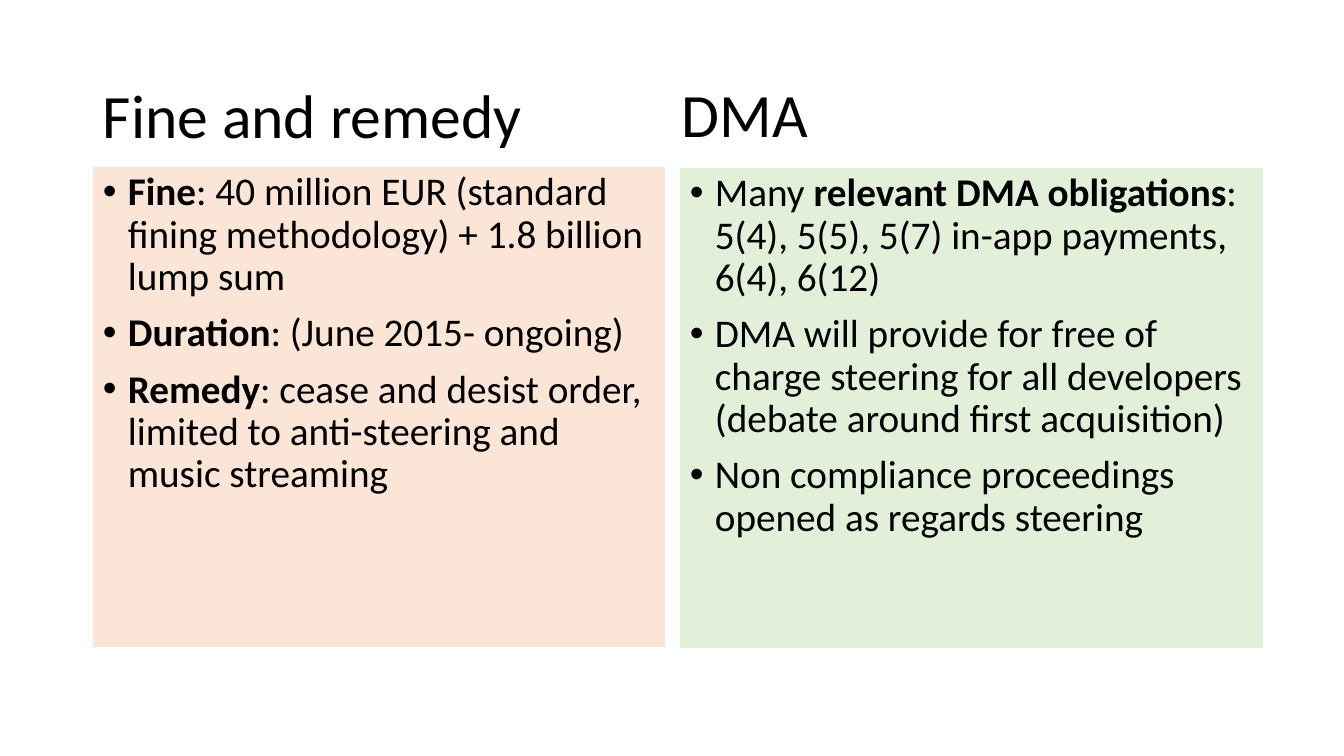
from lxml import etree
from pptx import Presentation
from pptx.dml.color import RGBColor
from pptx.enum.text import MSO_ANCHOR
from pptx.oxml.ns import qn
from pptx.util import Pt

MIDDLE = MSO_ANCHOR.MIDDLE
TOP = MSO_ANCHOR.TOP
PX = 914400 / 100.8
THEME = {
    "font": "Calibri",
    "text": RGBColor.from_string("000000"),
    "remedy_fill": RGBColor.from_string("FBE5D6"),
    "dma_fill": RGBColor.from_string("E2F0D9"),
    "heading": Pt(44),
    "body": Pt(28),
    "line_spacing": 0.9,
    "paragraph_gap": Pt(10),
}
BULLET_INDENT = 25


def px(length):
    return round(length * PX)


def add_text(slide, bounds, paragraphs, size, anchor):
    box = slide.shapes.add_textbox(*map(px, bounds))
    frame = box.text_frame
    frame.word_wrap = True
    frame.vertical_anchor = anchor
    for index, parts in enumerate(paragraphs):
        paragraph = frame.paragraphs[0] if index == 0 else frame.add_paragraph()
        paragraph.line_spacing = THEME["line_spacing"]
        if index:
            paragraph.space_before = THEME["paragraph_gap"]
        for words, bold in parts:
            run = paragraph.add_run()
            run.text = words
            run.font.name = THEME["font"]
            run.font.size = size
            run.font.bold = bold
            run.font.color.rgb = THEME["text"]
    return box


columns = [
    {
        "heading": "Fine and remedy",
        "heading_bounds": (93, 69, 444, 100),
        "panel_bounds": (93, 167, 572, 480),
        "fill": THEME["remedy_fill"],
        "points": [
            [("Fine", True),
             (": 40 million EUR (standard fining methodology) + 1.8 billion lump sum", False)],
            [("Duration", True), (": (June 2015- ongoing)", False)],
            [("Remedy", True),
             (": cease and desist order, limited to anti-steering and music streaming", False)],
        ],
    },
    {
        "heading": "DMA",
        "heading_bounds": (672, 59, 464, 117),
        "panel_bounds": (680, 168, 583, 480),
        "fill": THEME["dma_fill"],
        "points": [
            [("Many ", False), ("relevant DMA obligations", True),
             (": 5(4), 5(5), 5(7) in-app payments, 6(4), 6(12)", False)],
            [("DMA will provide for free of charge steering for all developers "
              "(debate around first acquisition)", False)],
            [("Non compliance proceedings opened as regards steering", False)],
        ],
    },
]

presentation = Presentation()
presentation.slide_width = px(1344)
presentation.slide_height = px(756)
slide = presentation.slides.add_slide(presentation.slide_layouts[6])

for column in columns:
    add_text(slide, column["heading_bounds"], [[(column["heading"], False)]],
             THEME["heading"], MIDDLE)
    panel = add_text(slide, column["panel_bounds"], column["points"], THEME["body"], TOP)
    panel.fill.solid()
    panel.fill.fore_color.rgb = column["fill"]
    for point in panel.text_frame.paragraphs:
        properties = point._p.get_or_add_pPr()
        properties.set("marL", str(px(BULLET_INDENT)))
        properties.set("indent", str(-px(BULLET_INDENT)))
        etree.SubElement(properties, qn("a:buFont"), typeface="Arial")
        etree.SubElement(properties, qn("a:buChar"), char="•")

presentation.save("out.pptx")
